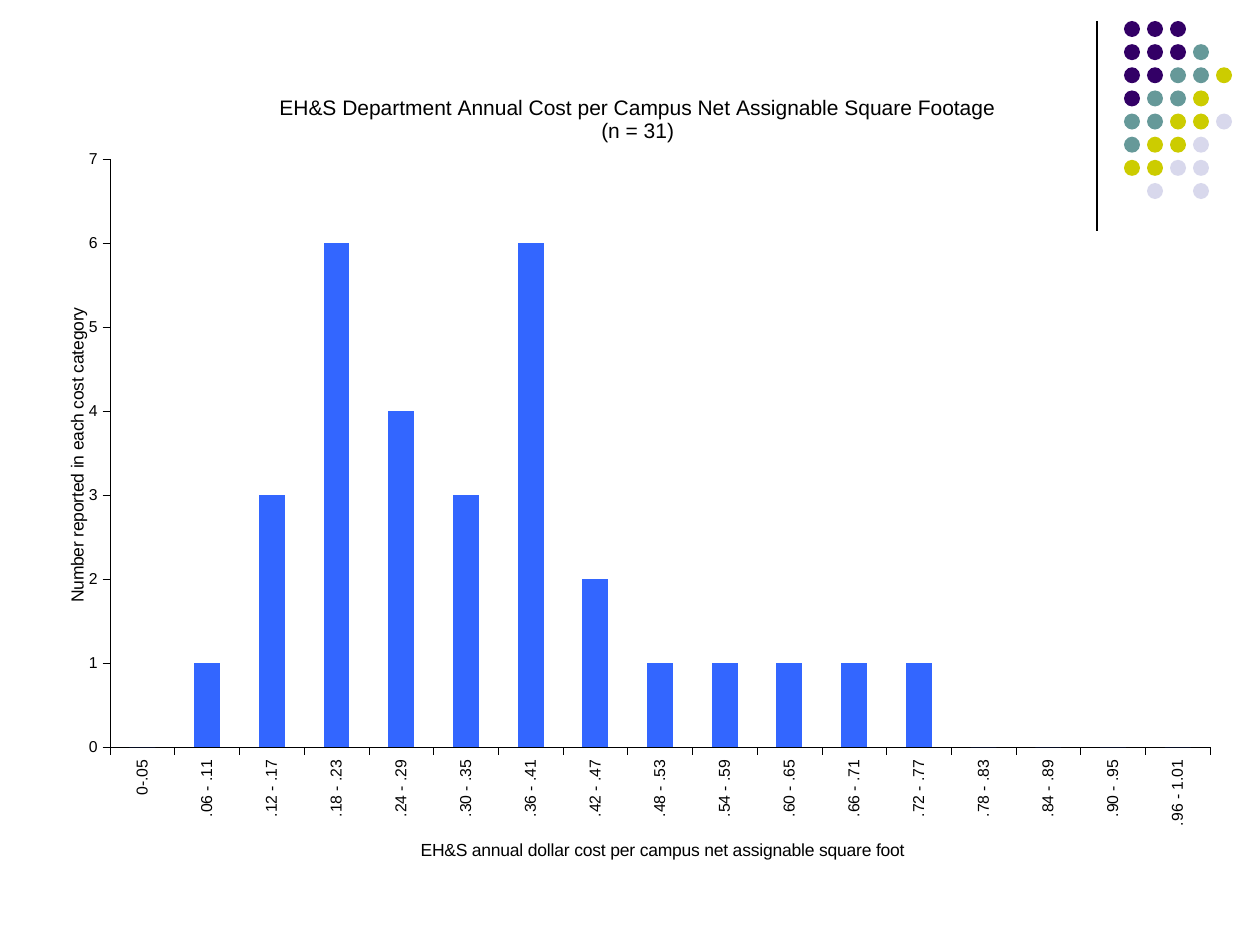
from pptx import Presentation
from pptx import util as u
from pptx.chart.data import CategoryChartData
from pptx.dml.color import RGBColor
from pptx.enum import chart as ch
from pptx.enum import shapes
from pptx.oxml import parse_xml
from pptx.oxml.ns import nsdecls, qn

SCALE = 914400 / 126
FONT = "Arial"
COLORS = {"ink": "000000", "bar": "3366FF", "purple": "330066",
          "teal": "669999", "lime": "CCCC00", "mist": "D8D8EC"}
DOT_KEYS = {"P": "purple", "T": "teal", "L": "lime", "M": "mist"}
DOT_ROWS = ["PPP", "PPPT", "PPTTL", "PTTL", "TTLLM", "TLLM", "LLMM", " M M"]
RANGES = ["0-.05", ".06 - .11", ".12 - .17", ".18 - .23", ".24 - .29", ".30 - .35",
          ".36 - .41", ".42 - .47", ".48 - .53", ".54 - .59", ".60 - .65", ".66 - .71",
          ".72 - .77", ".78 - .83", ".84 - .89", ".90 - .95", ".96 - 1.01"]
COUNTS = [0, 1, 3, 6, 4, 3, 6, 2, 1, 1, 1, 1, 1, 0, 0, 0, 0]
TITLE = ["EH&S Department Annual Cost per Campus Net Assignable Square Footage", "(n = 31)"]
COST_TITLE = ["EH&S annual dollar cost per campus net assignable square foot"]
COUNT_TITLE = ["Number reported in each cost category"]


def px(value):
    """Turn px into EMU."""
    return u.Emu(round(value * SCALE))


def color(name):
    """Look up a named colour."""
    return RGBColor.from_string(COLORS[name])


def style_font(font, size):
    """Set the plain black face used throughout the chart."""
    font.name, font.size, font.bold = FONT, u.Pt(size), False
    font.color.rgb = color("ink")


def place(element, **fractions):
    """Give a chart part a manual layout in fractions of the chart."""
    layout = element.find(qn("c:layout"))
    if layout is None:
        layout = parse_xml(f"<c:layout {nsdecls('c')}/>")
        element.insert(0, layout)
    target = '<c:layoutTarget val="inner"/>' if "w" in fractions else ""
    modes = "".join(f'<c:{key}Mode val="edge"/>' for key in "xy")
    sizes = "".join(f'<c:{key} val="{value}"/>' for key, value in fractions.items())
    layout.append(parse_xml(
        f"<c:manualLayout {nsdecls('c')}>{target}{modes}{sizes}</c:manualLayout>"))


def write_title(title, lines, size, x, y):
    """Write a chart or axis title and place it."""
    frame = title.text_frame
    for index, line in enumerate(lines):
        para = frame.add_paragraph() if index else frame.paragraphs[0]
        style_font(para.font, size)
        span = para.add_run()
        span.text = line
        style_font(span.font, size)
    place(title._element, x=x, y=y)


def turn_up(element):
    """Make text under an element read upwards."""
    body = element.find(".//" + qn("a:bodyPr"))
    body.set("rot", "-5400000")
    body.set("vert", "horz")


def style_axis(axis, lines, x, y):
    """Format an axis with its ticks, labels and title."""
    axis.has_major_gridlines = False
    axis.major_tick_mark = ch.XL_TICK_MARK.OUTSIDE
    axis.minor_tick_mark = ch.XL_TICK_MARK.NONE
    axis.format.line.color.rgb = color("ink")
    axis.format.line.width = u.Pt(0.25)
    style_font(axis.tick_labels.font, 9)
    write_title(axis.axis_title, lines, 10, x, y)


def add_cost_chart(page, left, top, width, height):
    """Add the column chart of cost ranges."""
    data = CategoryChartData()
    data.categories = RANGES
    data.add_series("Series 1", COUNTS)
    chart = page.shapes.add_chart(ch.XL_CHART_TYPE.COLUMN_CLUSTERED, px(left), px(top),
                                  px(width), px(height), data).chart
    style_font(chart.font, 10)
    chart.has_legend = False
    write_title(chart.chart_title, TITLE, 12, 0.2, 0.025)
    costs, counts = chart.category_axis, chart.value_axis
    style_axis(costs, COST_TITLE, 0.32, 0.95)
    style_axis(counts, COUNT_TITLE, 0.02, 0.29)
    turn_up(costs._element.find(qn("c:txPr")))
    turn_up(counts.axis_title._element)
    counts.minimum_scale, counts.maximum_scale, counts.major_unit = 0, 7, 1
    plot = chart.plots[0]
    plot.gap_width, plot.vary_by_categories = 150, False
    fill = plot.series[0].format.fill
    fill.solid()
    fill.fore_color.rgb = color("bar")
    place(chart._chartSpace.find(".//" + qn("c:plotArea")), x=0.06, y=0.11, w=0.93, h=0.73)


def add_rule(page, left, top, height):
    """Add the upright line beside the dots."""
    rule = page.shapes.add_connector(shapes.MSO_CONNECTOR.STRAIGHT, px(left), px(top),
                                     px(left), px(top + height))
    rule.line.color.rgb = color("ink")
    rule.line.width = u.Pt(0.75)
    rule._element.spPr.append(parse_xml(f"<a:effectLst {nsdecls('a')}/>"))


def add_dots(page, left, top, width, height):
    """Add the grouped grid of coloured dots."""
    size = 16
    step_x = (width - size) / (max(map(len, DOT_ROWS)) - 1)
    step_y = (height - size) / (len(DOT_ROWS) - 1)
    group = page.shapes.add_group_shape()
    for row, keys in enumerate(DOT_ROWS):
        for column, key in enumerate(keys):
            if key == " ":
                continue
            dot = group.shapes.add_shape(
                shapes.MSO_SHAPE.OVAL, px(left + column * step_x),
                px(top + row * step_y), px(size), px(size))
            dot.shadow.inherit = False
            dot.fill.solid()
            dot.fill.fore_color.rgb = color(DOT_KEYS[key])
            dot.line.fill.background()


def main():
    """Build and save the deck."""
    deck = Presentation()
    deck.slide_width, deck.slide_height = px(1260), px(945)
    page = deck.slides.add_slide(deck.slide_layouts[6])
    add_rule(page, 1097, 21, 210)
    add_dots(page, 1124, 21, 108, 178)
    add_cost_chart(page, 39, 71, 1183, 805)
    deck.save("out.pptx")


if __name__ == "__main__":
    main()
